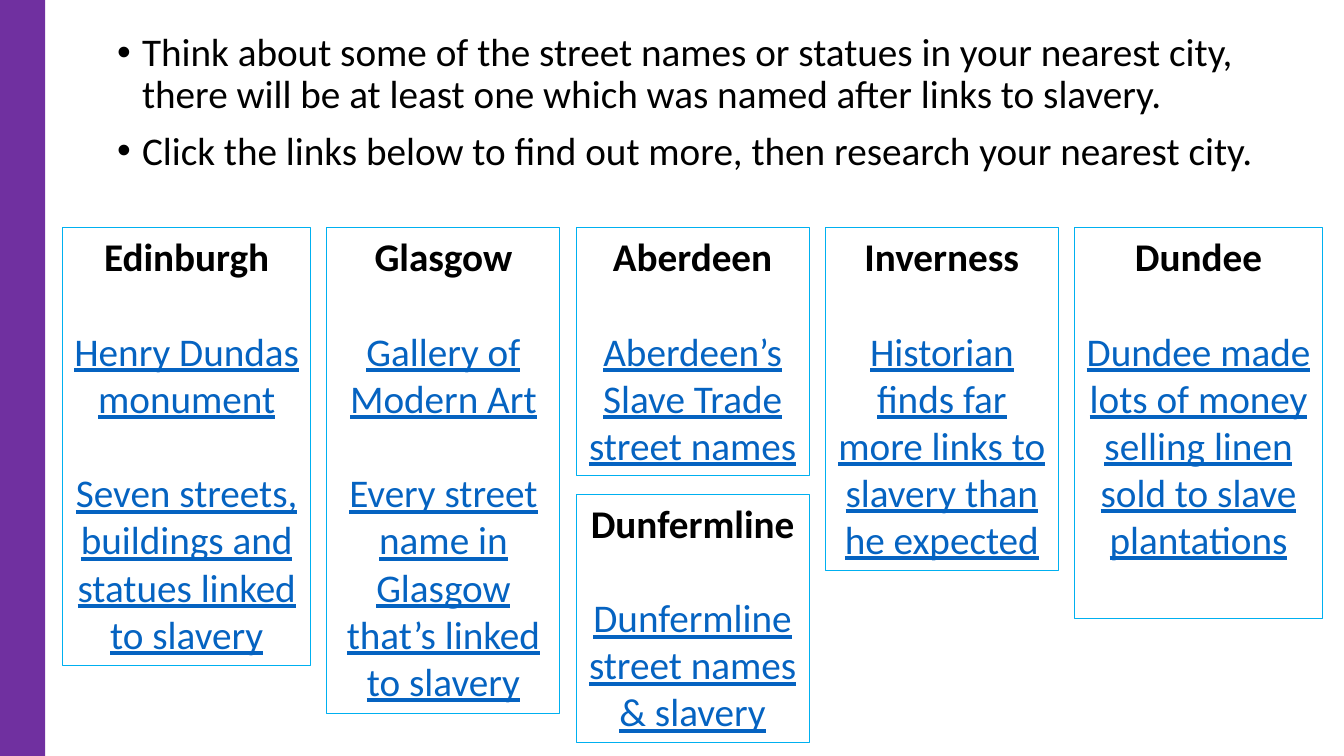
from dataclasses import dataclass

from lxml import etree
from pptx import Presentation
from pptx import util as u
from pptx.dml.color import RGBColor
from pptx.enum import shapes, text
from pptx.oxml import ns


@dataclass(frozen=True)
class Theme:
    font: str = "Calibri"
    size: int = 28
    ink: str = "000000"
    link: str = "0563C1"
    edge: str = "00B0F0"
    bar: str = "7030A0"


@dataclass(frozen=True)
class Card:
    city: str
    links: tuple[str, ...]
    col: int
    lines: int
    top: float = 5.73


THEME = Theme()
LEFT, GAP = 1.58, 0.41
WIDTHS = (6.25, 5.87, 5.87, 5.87, 6.25)
PAD, LINE = 0.25, 1.2  # card height in cm: padding plus text lines

POINTS = (
    "Think about some of the street names or statues in your nearest city, "
    "there will be at least one which was named after links to slavery.",
    "Click the links below to find out more, then research your nearest city.",
)
CARDS = (
    Card("Edinburgh", ("Henry Dundas monument",
                       "Seven streets, buildings and statues linked to slavery"), 0, 9),
    Card("Glasgow", ("Gallery of Modern Art",
                     "Every street name in Glasgow that’s linked to slavery"), 1, 10),
    Card("Aberdeen", ("Aberdeen’s Slave Trade street names",), 2, 5),
    Card("Dundee", ("Dundee made lots of money selling linen sold to slave plantations",),
         4, 8),
    Card("Inverness", ("Historian finds far more links to slavery than he expected",), 3, 7),
    Card("Dunfermline", ("Dunfermline street names & slavery",), 2, 5, 12.45),
)


def add_run(para, words: str, color: str, bold: bool = False, under: bool = False) -> None:
    run = para.add_run()
    run.text = words
    font = run.font
    font.name, font.size = THEME.font, u.Pt(THEME.size)
    font.bold, font.underline = bold, under
    font.color.rgb = RGBColor.from_string(color)


def next_para(frame, first: bool):
    """Give the frame's opening paragraph, or a new one after it."""
    return frame.paragraphs[0] if first else frame.add_paragraph()


def add_rect(slide, left: float, top: float, width: float, height: float):
    rect = slide.shapes.add_shape(shapes.MSO_SHAPE.RECTANGLE, u.Cm(left), u.Cm(top),
                                  u.Cm(width), u.Cm(height))
    rect.shadow.inherit = False
    return rect


def add_points(slide) -> None:
    box = slide.shapes.add_textbox(u.Cm(2.7), u.Cm(0.7), u.Cm(29.2), u.Cm(5.18))
    frame = box.text_frame
    frame.word_wrap = True
    for i, words in enumerate(POINTS):
        para = next_para(frame, i == 0)
        para.line_spacing, para.space_before = 0.9, u.Pt(10)
        props = para._p.get_or_add_pPr()
        props.set("marL", str(u.Cm(0.63)))
        props.set("indent", str(u.Cm(-0.63)))
        etree.SubElement(props, ns.qn("a:buFont"), typeface="Arial")
        etree.SubElement(props, ns.qn("a:buChar"), char="•")
        add_run(para, words, THEME.ink)


def add_card(slide, card: Card) -> None:
    left = LEFT + sum(WIDTHS[:card.col]) + GAP * card.col
    rect = add_rect(slide, left, card.top, WIDTHS[card.col], PAD + LINE * card.lines)
    rect.fill.background()
    rect.line.color.rgb = RGBColor.from_string(THEME.edge)
    rect.line.width = u.Pt(0.75)
    frame = rect.text_frame
    frame.word_wrap = True
    frame.vertical_anchor = text.MSO_ANCHOR.TOP
    for i, words in enumerate((card.city, *card.links)):
        head = i == 0
        para = next_para(frame, head)
        para.alignment = text.PP_ALIGN.CENTER
        para.space_before = u.Pt(0 if head else 34)
        add_run(para, words, THEME.ink if head else THEME.link, bold=head, under=not head)


def add_bar(slide) -> None:
    bar = add_rect(slide, 0, 0, 1.14, 19.05)
    bar.fill.solid()
    bar.fill.fore_color.rgb = RGBColor.from_string(THEME.bar)
    bar.line.fill.background()


def main() -> None:
    deck = Presentation()
    deck.slide_width, deck.slide_height = u.Cm(33.87), u.Cm(19.05)
    slide = deck.slides.add_slide(deck.slide_layouts[6])
    add_points(slide)
    for card in CARDS:
        add_card(slide, card)
    add_bar(slide)
    deck.save("out.pptx")


if __name__ == "__main__":
    main()
